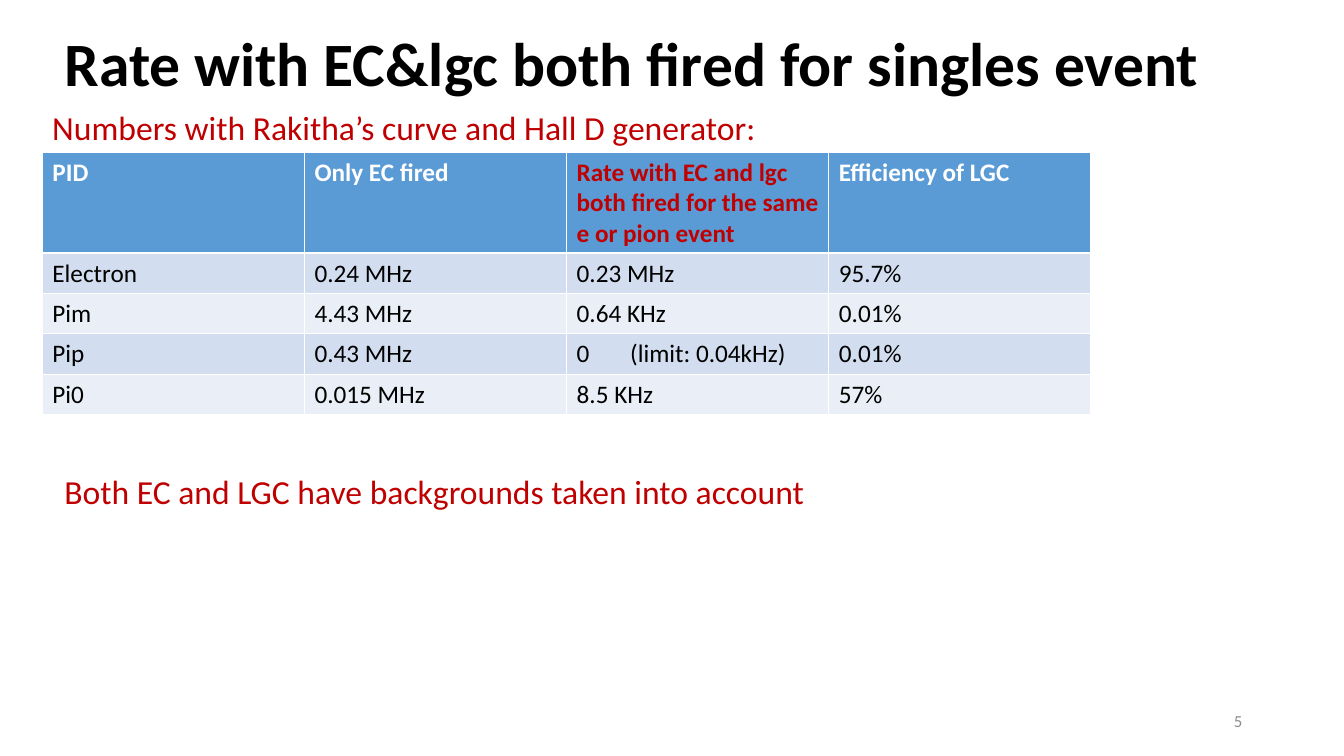
from pptx import Presentation
from pptx.dml.color import RGBColor
from pptx.enum.text import MSO_ANCHOR as Anchor, MSO_AUTO_SIZE as AutoSize, PP_ALIGN as Align
from pptx.oxml.ns import qn
from pptx.util import Inches, Pt
from lxml import etree

BLACK, WHITE, RED, GRAY = "000000", "FFFFFF", "C00000", "8C8C8C"
HEADER_FILL, BAND_FILLS = "5B9BD5", ("D2DEEF", "EAEFF7")

RATES = [
    ["PID", "Only EC fired",
     "Rate with EC and lgc both fired for the same e or pion event",
     "Efficiency of LGC"],
    ["Electron", "0.24 MHz", "0.23 MHz", "95.7%"],
    ["Pim", "4.43 MHz", "0.64 KHz", "0.01%"],
    ["Pip", "0.43 MHz", "0\t(limit: 0.04kHz)", "0.01%"],
    ["Pi0", "0.015 MHz", "8.5 KHz", "57%"],
]


def color(value):
    return RGBColor.from_string(value)


def add_tab_stop(paragraph, position):
    properties = paragraph._p.get_or_add_pPr()
    tabs = etree.Element(qn("a:tabLst"))
    etree.SubElement(tabs, qn("a:tab"), pos=str(position), algn="l")
    properties.insert(0, tabs)


class SlideBuilder:
    """Holds the font and the current slide."""

    def __init__(self, slide, font_name="Calibri"):
        self.slide = slide
        self.font_name = font_name

    def set_text(self, frame, text, size, text_color, bold=False, align=Align.LEFT):
        """Fill a text frame with one formatted paragraph and return it."""
        frame.text = text
        paragraph = frame.paragraphs[0]
        paragraph.alignment = align
        font = paragraph.font
        font.name, font.size, font.bold = self.font_name, Pt(size), bold
        font.color.rgb = color(text_color)
        return paragraph

    def title(self, text, left, top, width, height):
        shape = self.slide.shapes.title
        shape.left, shape.top = Inches(left), Inches(top)
        shape.width, shape.height = Inches(width), Inches(height)
        frame = shape.text_frame
        frame.vertical_anchor = Anchor.MIDDLE
        frame.auto_size = AutoSize.NONE
        self.set_text(frame, text, 44, BLACK, bold=True).line_spacing = 0.9

    def text(self, text, left, top, width, height, size=24, text_color=RED,
             align=Align.LEFT, anchor=Anchor.TOP, wrap=True):
        box = self.slide.shapes.add_textbox(
            Inches(left), Inches(top), Inches(width), Inches(height))
        frame = box.text_frame
        frame.word_wrap = wrap
        frame.vertical_anchor = anchor
        self.set_text(frame, text, size, text_color, align=align)

    def table(self, rows, left, top, column_width, header_height, row_height):
        columns = len(rows[0])
        height = header_height + row_height * (len(rows) - 1)
        table = self.slide.shapes.add_table(
            len(rows), columns, Inches(left), Inches(top),
            Inches(column_width * columns), Inches(height)).table
        for column in table.columns:
            column.width = Inches(column_width)
        for r, values in enumerate(rows):
            header = r == 0
            table.rows[r].height = Inches(header_height if header else row_height)
            for c, value in enumerate(values):
                cell = table.cell(r, c)
                cell.fill.solid()
                cell.fill.fore_color.rgb = color(
                    HEADER_FILL if header else BAND_FILLS[(r - 1) % 2])
                header_color = RED if c == 2 else WHITE
                paragraph = self.set_text(cell.text_frame, value, 18,
                                          header_color if header else BLACK, bold=header)
                if "\t" in value:
                    add_tab_stop(paragraph, Inches(0.53))


def main():
    presentation = Presentation()
    presentation.slide_width, presentation.slide_height = Inches(13.33), Inches(7.5)
    title_only = presentation.slide_layouts[5]
    builder = SlideBuilder(presentation.slides.add_slide(title_only))

    builder.title("Rate with EC&lgc both fired for singles event", 0.54, 0.09, 11.5, 1.14)
    builder.text("5", 9.42, 6.95, 3, 0.4, size=12, text_color=GRAY,
                 align=Align.RIGHT, anchor=Anchor.MIDDLE)
    builder.table(RATES, 0.42, 1.51, column_width=2.6, header_height=0.98, row_height=0.39)
    builder.text("Numbers with Rakitha’s curve and Hall D generator:",
                 0.42, 1.01, 7.2, 0.5, wrap=False)
    builder.text("Both EC and LGC have backgrounds taken into account",
                 0.54, 4.62, 10.18, 0.5)
    presentation.save("out.pptx")


if __name__ == "__main__":
    main()
